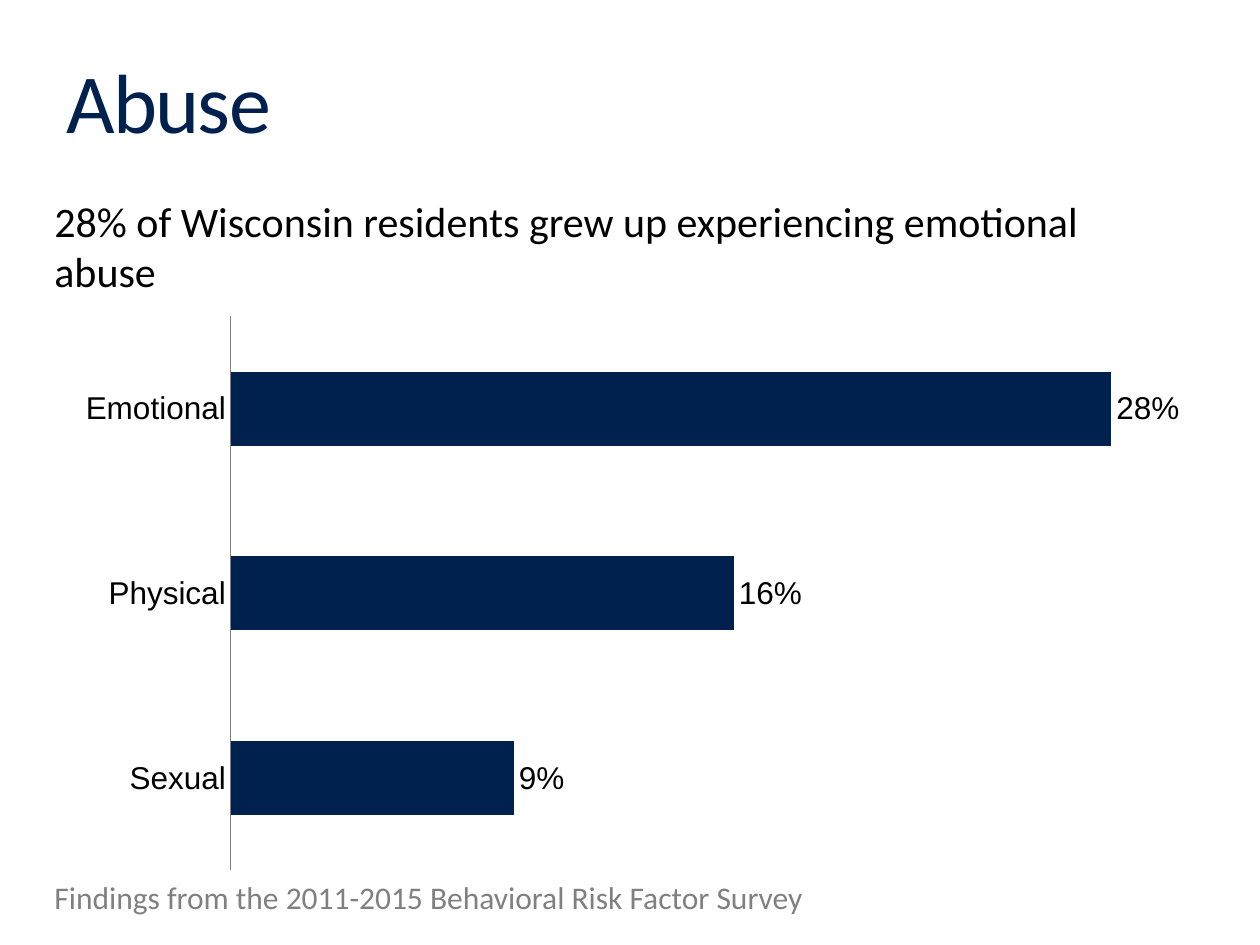
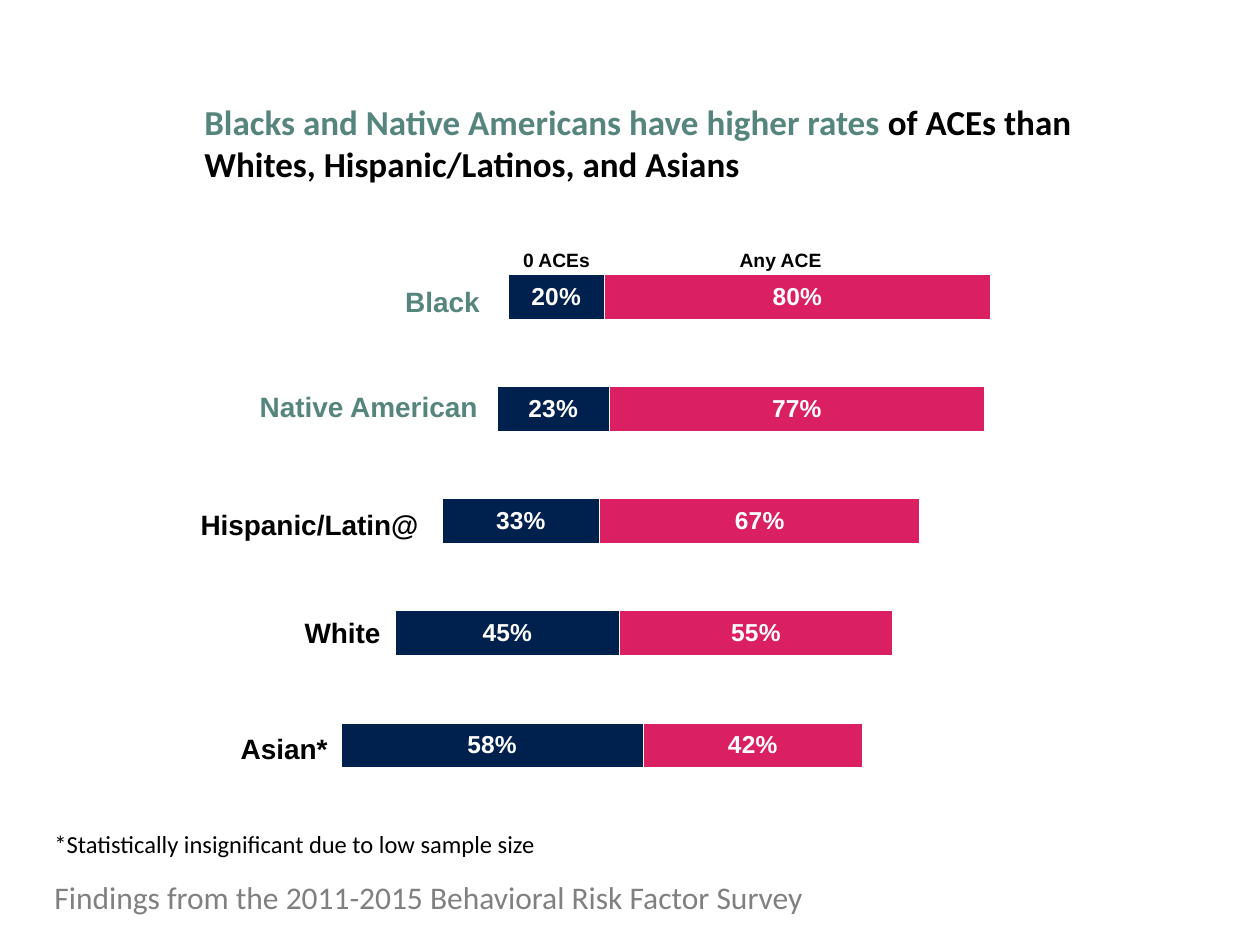
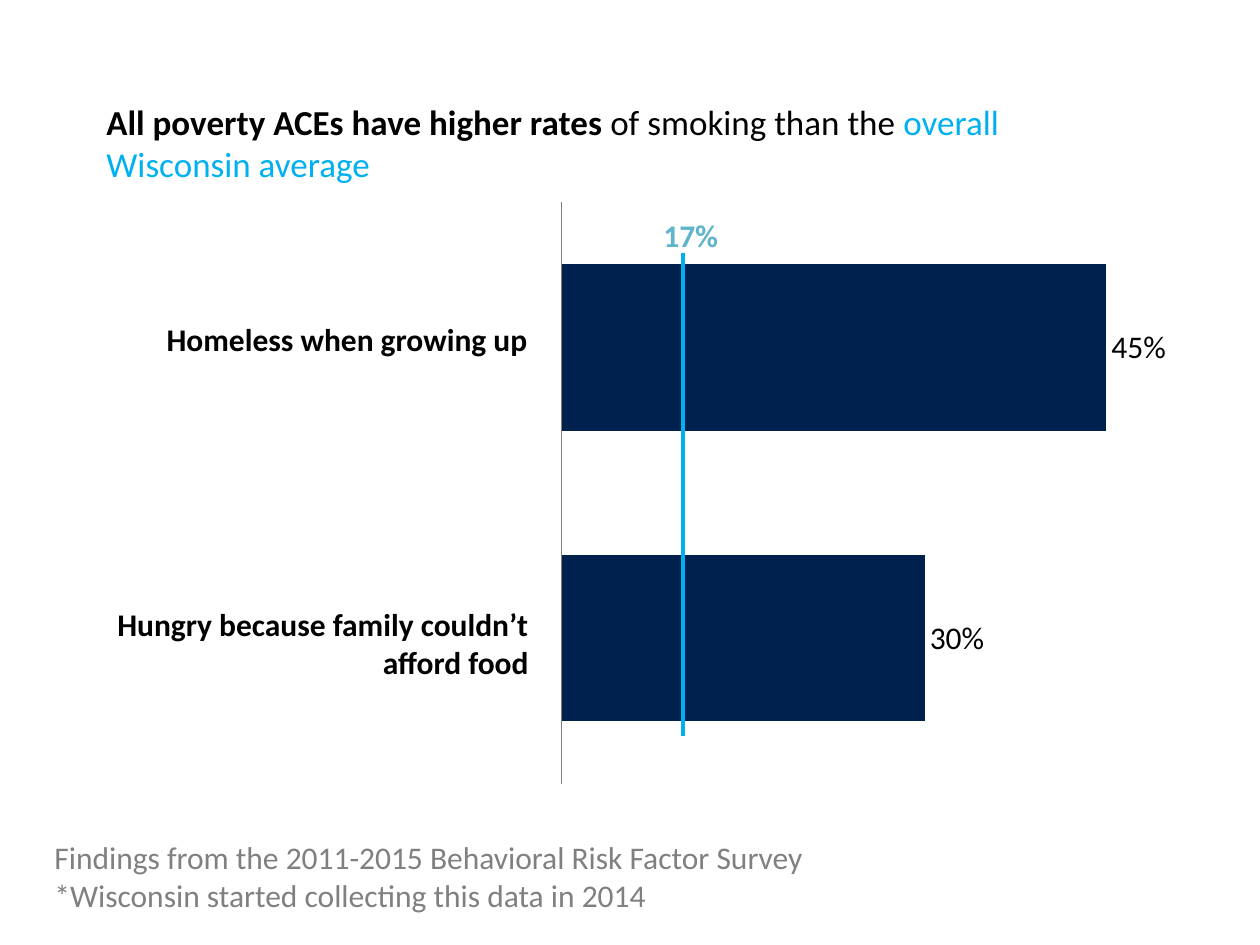
"""Build three slides of survey findings on adverse childhood experiences."""
import pptx
import pptx.chart.data
import pptx.dml.color
import pptx.enum.chart
import pptx.enum.text
import pptx.oxml
import pptx.oxml.ns
import pptx.util

SCALE = 914400 / 126
NAVY = pptx.dml.color.RGBColor(0x00, 0x20, 0x4E)
BLACK = pptx.dml.color.RGBColor(0x00, 0x00, 0x00)
WHITE = pptx.dml.color.RGBColor(0xFF, 0xFF, 0xFF)
GRAY = pptx.dml.color.RGBColor(0x80, 0x80, 0x80)
GREEN = pptx.dml.color.RGBColor(0x56, 0x85, 0x7D)
PINK = pptx.dml.color.RGBColor(0xDB, 0x1F, 0x63)
SKY = pptx.dml.color.RGBColor(0x00, 0xB0, 0xF0)
TEAL = pptx.dml.color.RGBColor(0x60, 0xB5, 0xCC)
SOURCE = "Findings from the 2011-2015 Behavioral Risk Factor Survey"
FOOTER_BOX = (42, 872, 1040, 50)
LEFT = pptx.enum.text.PP_ALIGN.LEFT
CENTER = pptx.enum.text.PP_ALIGN.CENTER
RIGHT = pptx.enum.text.PP_ALIGN.RIGHT
CLUSTERED = pptx.enum.chart.XL_CHART_TYPE.BAR_CLUSTERED
STACKED_100 = pptx.enum.chart.XL_CHART_TYPE.BAR_STACKED_100


def add_text(slide, box, size, paragraphs, alignment=LEFT, font="Calibri"):
    """Add a text box; each paragraph is a list of (text, colour, bold) runs."""
    shape = slide.shapes.add_textbox(*[round(length * SCALE) for length in box])
    shape.text_frame.word_wrap = True
    for index, runs in enumerate(paragraphs):
        paragraph = shape.text_frame.paragraphs[0] if index == 0 else shape.text_frame.add_paragraph()
        paragraph.alignment = alignment
        for text, color, bold in runs:
            run = paragraph.add_run()
            run.text = text
            run.font.name = font
            run.font.size = pptx.util.Pt(size)
            run.font.bold = bold
            run.font.color.rgb = color
    return shape


def add_bar_chart(slide, kind, box, categories, series_list, gap, maximum, plot_box, font, label_color=BLACK, label_size=18):
    """Add a horizontal bar chart; series without a colour stay invisible."""
    data = pptx.chart.data.CategoryChartData(number_format="0%")
    data.categories = categories
    for number, (values, color) in enumerate(series_list, 1):
        data.add_series(f"Series {number}", values)
    chart = slide.shapes.add_chart(kind, *[round(length * SCALE) for length in box], data).chart
    chart.has_title = False
    chart.has_legend = False
    chart.font.name = font
    chart.font.size = pptx.util.Pt(18)
    chart.font.color.rgb = BLACK
    chart.value_axis.visible = False
    chart.value_axis.has_major_gridlines = False
    chart.value_axis.minimum_scale = 0
    chart.value_axis.maximum_scale = maximum
    chart.category_axis.major_tick_mark = pptx.enum.chart.XL_TICK_MARK.NONE
    chart.category_axis.format.line.color.rgb = GRAY
    chart.category_axis.format.line.width = pptx.util.Pt(0.75)
    plot = chart.plots[0]
    plot.gap_width = gap
    plot.vary_by_categories = False
    for series, (values, color) in zip(plot.series, series_list):
        if color is None:
            series.format.fill.background()
            series.format.line.fill.background()
            continue
        series.format.fill.solid()
        series.format.fill.fore_color.rgb = color
        labels = series.data_labels
        labels.show_value = True
        labels.number_format = "0%"
        labels.number_format_is_linked = False
        labels.font.name = font
        labels.font.size = pptx.util.Pt(label_size)
        labels.font.color.rgb = label_color
        if kind == CLUSTERED:
            labels.position = pptx.enum.chart.XL_LABEL_POSITION.OUTSIDE_END
        else:
            labels.position = pptx.enum.chart.XL_LABEL_POSITION.CENTER
            labels.font.bold = True
            series.format.line.color.rgb = WHITE
            series.format.line.width = pptx.util.Pt(0.75)
    plot_area = chart.element.chart.plotArea
    for layout in plot_area.findall(pptx.oxml.ns.qn("c:layout")):
        plot_area.remove(layout)
    places = "".join(f'<c:{name} val="{value}"/>' for name, value in zip("xywh", plot_box))
    plot_area.insert(0, pptx.oxml.parse_xml(
        f'<c:layout {pptx.oxml.ns.nsdecls("c")}><c:manualLayout><c:layoutTarget val="inner"/>'
        f'<c:xMode val="edge"/><c:yMode val="edge"/>{places}</c:manualLayout></c:layout>'))
    return chart


presentation = pptx.Presentation()
presentation.slide_width = round(1260 * SCALE)
presentation.slide_height = round(945 * SCALE)
abuse_slide, race_slide, poverty_slide = [
    presentation.slides.add_slide(presentation.slide_layouts[6]) for _ in range(3)]

title = add_text(abuse_slide, (54, 32, 1134, 136), 48, [[("Abuse", NAVY, False)]])
title.text_frame.vertical_anchor = pptx.enum.text.MSO_ANCHOR.MIDDLE
title.text_frame.paragraphs[0].runs[0].font._element.set("spc", "-100")
add_bar_chart(abuse_slide, CLUSTERED, (63, 305, 1134, 577), ["Sexual", "Physical", "Emotional"],
              [([0.09, 0.16, 0.28], NAVY)], 150, 0.3, (0.148, 0.02, 0.832, 0.96), "Arial")
add_text(abuse_slide, (42, 189, 1144, 115), 24,
         [[("28% of Wisconsin residents grew up experiencing emotional abuse", BLACK, False)]])
add_text(abuse_slide, FOOTER_BOX, 18, [[(SOURCE, GRAY, False)]])

any_ace = [0.42, 0.55, 0.67, 0.77, 0.8]
race_chart = add_bar_chart(
    race_slide, STACKED_100, (105, 220, 1008, 599), ["1", "2", "3", "4", "5"],
    [(any_ace, None), ([0.58, 0.45, 0.33, 0.23, 0.2], NAVY), (any_ace, PINK),
     ([0.44, 0.4, 0.36, 0.22, 0.21], None)],
    150, 1, (0.017, 0.035, 0.962, 0.936), "Arial", WHITE, 14)
race_chart.plots[0].overlap = 100
race_chart.category_axis.visible = False
for group, color, box in [
    ("Black", GREEN, (372, 278, 120, 38)),
    ("Native American", GREEN, (199, 383, 291, 39)),
    ("Hispanic/Latin@", BLACK, (155, 501, 276, 42)),
    ("White", BLACK, (252, 609, 141, 48)),
    ("Asian*", BLACK, (199, 725, 141, 48)),
]:
    add_text(race_slide, box, 16, [[(group, color, True)]], RIGHT, "Arial")
for heading, box in [("0 ACEs", (504, 242, 105, 37)), ("Any ACE", (690, 242, 181, 37))]:
    add_text(race_slide, box, 11, [[(heading, BLACK, True)]], CENTER, "Arial")
add_text(race_slide, (192, 94, 900, 130), 20,
         [[("Blacks and Native Americans have higher rates ", GREEN, True),
           ("of ACEs than Whites, Hispanic/Latinos, and Asians", BLACK, True)]])
add_text(race_slide, FOOTER_BOX, 18, [[(SOURCE, GRAY, False)]])
add_text(race_slide, (42, 823, 1040, 43), 14,
         [[("*Statistically insignificant due to low sample size", BLACK, False)]])

poverty_chart = add_bar_chart(
    poverty_slide, CLUSTERED, (73, 183, 1113, 620), ["1", "2"], [([0.3, 0.45], NAVY)],
    75, 0.5, (0.439, 0.031, 0.544, 0.938), "Calibri")
poverty_chart.category_axis.tick_label_position = pptx.enum.chart.XL_TICK_LABEL_POSITION.NONE
average_line = poverty_slide.shapes.add_connector(
    pptx.enum.shapes.MSO_CONNECTOR.STRAIGHT, *[round(length * SCALE) for length in (683, 253, 683, 736)])
average_line.line.color.rgb = SKY
average_line.line.width = pptx.util.Pt(2.25)
average_line._element.spPr.append(pptx.oxml.parse_xml(f'<a:effectLst {pptx.oxml.ns.nsdecls("a")}/>'))
add_text(poverty_slide, (651, 210, 116, 45), 18, [[("17%", TEAL, True)]])
add_text(poverty_slide, (94, 94, 997, 130), 20,
         [[("All poverty ACEs have higher rates ", BLACK, True),
           ("of smoking than the ", BLACK, False),
           ("overall Wisconsin average", SKY, False)]])
add_text(poverty_slide, (42, 832, 1040, 89), 18,
         [[(SOURCE, GRAY, False)], [("*Wisconsin started collecting this data in 2014", GRAY, False)]])
for hardship, box in [
    ("Homeless when growing up", (141, 314, 399, 50)),
    ("Hungry because family couldn’t afford food", (42, 599, 499, 89)),
]:
    add_text(poverty_slide, box, 18, [[(hardship, BLACK, True)]], RIGHT)

presentation.save("out.pptx")
